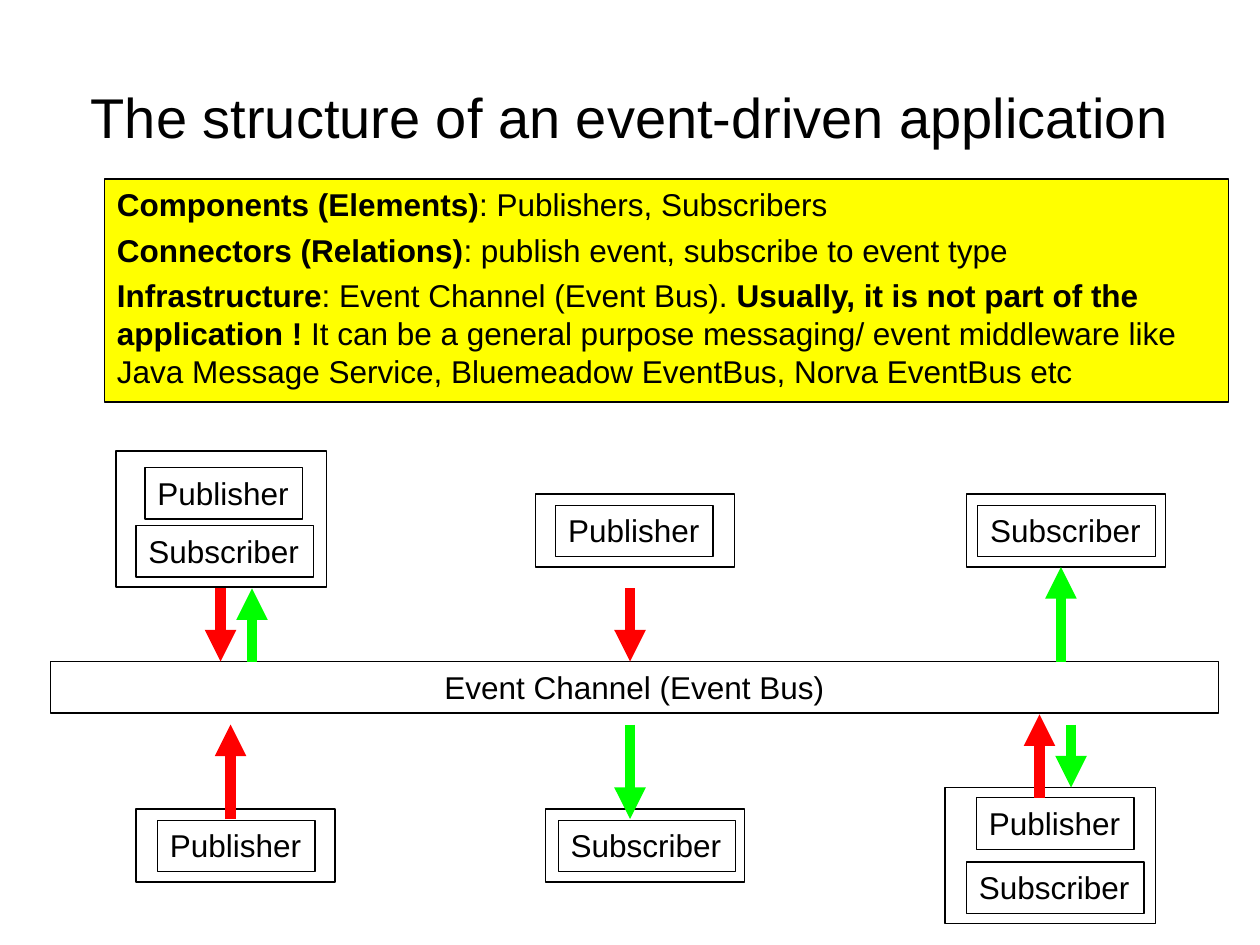
from lxml import etree
from pptx import Presentation
from pptx.dml.color import RGBColor
from pptx.enum import shapes, text
from pptx.oxml import ns
from pptx.util import Inches, Pt

BLACK, YELLOW, RED, GREEN = "000000", "FFFF00", "FF0000", "00FF00"
ROLE_WIDTHS = {"Publisher": 1.25, "Subscriber": 1.41}
ROW_HEIGHT = 0.41

FRAMES = [
    (7.67, 3.92, 1.58, 0.58),
    (4.25, 3.92, 1.58, 0.58),
    (1.08, 6.42, 1.58, 0.58),
    (4.33, 6.42, 1.58, 0.58),
    (7.5, 6.25, 1.67, 1.08),
    (0.92, 3.58, 1.67, 1.08),
]
ROLES = [
    ("Publisher", 1.15, 3.71),
    ("Publisher", 4.41, 4.01),
    ("Publisher", 1.25, 6.51),
    ("Publisher", 7.75, 6.33),
    ("Subscriber", 1.08, 4.17),
    ("Subscriber", 4.43, 6.51),
    ("Subscriber", 7.76, 4.01),
    ("Subscriber", 7.67, 6.84),
]
ARROWS = [
    (RED, 1.75, 4.67, 5.25),
    (RED, 8.25, 6.33, 5.67),
    (RED, 5, 4.67, 5.25),
    (RED, 1.83, 6.5, 5.75),
    (GREEN, 2, 5.25, 4.67),
    (GREEN, 8.42, 5.25, 4.5),
    (GREEN, 5, 5.75, 6.5),
    (GREEN, 8.5, 5.75, 6.25),
]
SUMMARY = [
    [("Components (Elements)", True), (": Publishers, Subscribers", False)],
    [("Connectors (Relations)", True),
     (": publish event, subscribe to event type", False)],
    [("Infrastructure", True),
     (": Event Channel (Event Bus). ", False),
     ("Usually, it is not part of the application !", True),
     (" It can be a general purpose messaging/ event middleware like "
      "Java Message Service, Bluemeadow EventBus, Norva EventBus etc", False)],
]


def color(value):
    return RGBColor.from_string(value)


def style_paragraph(paragraph, size=18, alignment=text.PP_ALIGN.LEFT):
    paragraph.alignment = alignment
    paragraph.font.name = "Arial"
    paragraph.font.size = Pt(size)
    paragraph.font.color.rgb = color(BLACK)


def add_title(slide, wording):
    title = slide.shapes.title
    title.left, title.top = Inches(0.5), Inches(0.3)
    title.width, title.height = Inches(9), Inches(1.25)
    title.text_frame.text = wording
    title.text_frame.vertical_anchor = text.MSO_ANCHOR.MIDDLE
    style_paragraph(title.text_frame.paragraphs[0], 32, text.PP_ALIGN.CENTER)


def add_box(slide, left, top, width, height, fill=None):
    shape = slide.shapes.add_shape(
        shapes.MSO_SHAPE.RECTANGLE,
        Inches(left), Inches(top), Inches(width), Inches(height))
    shape.shadow.inherit = False
    shape.line.color.rgb = color(BLACK)
    shape.line.width = Pt(0.75)
    if fill:
        shape.fill.solid()
        shape.fill.fore_color.rgb = color(fill)
    else:
        shape.fill.background()
    return shape


def set_frame(shape, wrap):
    frame = shape.text_frame
    frame.word_wrap = wrap
    frame.auto_size = text.MSO_AUTO_SIZE.SHAPE_TO_FIT_TEXT
    frame.vertical_anchor = text.MSO_ANCHOR.TOP
    return frame


def add_label(slide, wording, left, top, width, wrap=False,
              alignment=text.PP_ALIGN.LEFT):
    frame = set_frame(add_box(slide, left, top, width, ROW_HEIGHT), wrap)
    frame.text = wording
    style_paragraph(frame.paragraphs[0], alignment=alignment)


def add_arrow(slide, line_color, x, start, end):
    arrow = slide.shapes.add_connector(
        shapes.MSO_CONNECTOR.STRAIGHT,
        Inches(x), Inches(start), Inches(x), Inches(end))
    arrow.line.color.rgb = color(line_color)
    arrow.line.width = Pt(6)
    etree.SubElement(arrow.line._get_or_add_ln(), ns.qn("a:tailEnd"),
                     type="triangle")
    etree.SubElement(arrow._element.spPr, ns.qn("a:effectLst"))


def add_summary(slide):
    frame = set_frame(add_box(slide, 0.83, 1.42, 8.92, 1.77, YELLOW), True)
    for index, runs in enumerate(SUMMARY):
        paragraph = frame.add_paragraph() if index else frame.paragraphs[0]
        style_paragraph(paragraph)
        paragraph.space_before = Pt(4.5)
        for wording, bold in runs:
            run = paragraph.add_run()
            run.text = wording
            run.font.bold = bold


def main():
    presentation = Presentation()
    presentation.slide_width = Inches(10)
    presentation.slide_height = Inches(7.5)
    slide = presentation.slides.add_slide(presentation.slide_layouts[5])

    for frame in FRAMES:
        add_box(slide, *frame)
    add_title(slide, "The structure of an event-driven application")
    for role, left, top in ROLES:
        add_label(slide, role, left, top, ROLE_WIDTHS[role])
    add_label(slide, "Event Channel (Event Bus)", 0.4, 5.25, 9.27,
              wrap=True, alignment=text.PP_ALIGN.CENTER)
    for arrow in ARROWS:
        add_arrow(slide, *arrow)
    add_summary(slide)

    presentation.save("out.pptx")


if __name__ == "__main__":
    main()
